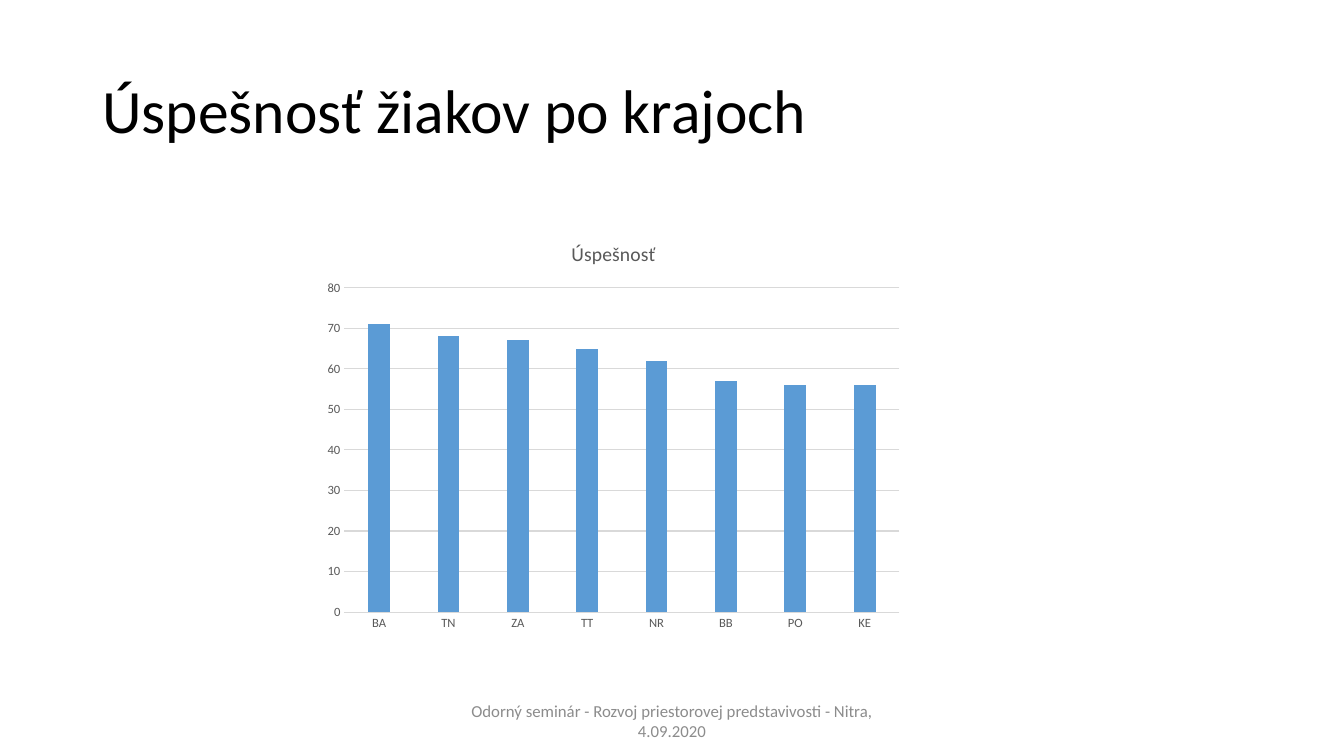
from pptx import Presentation
from pptx.chart.data import CategoryChartData
from pptx.dml.color import RGBColor
from pptx.enum import chart as charts, text
from pptx.util import Pt

THEME = {
    "font": "Calibri",
    "title": {"size": 44, "color": "000000"},
    "footer": {"size": 12, "color": "8C8C8C"},
    "chart": {"size": 10, "color": "000000"},
    "chart_title": {"size": 14, "color": "595959"},
    "axis": {"size": 9, "color": "595959"},
    "grid": "D9D9D9",
    "bar": "5B9BD5",
}


def style_font(font, role):
    look = {"name": THEME["font"], "size": Pt(THEME[role]["size"]), "bold": False}
    for key, value in look.items():
        setattr(font, key, value)
    font.color.rgb = RGBColor.from_string(THEME[role]["color"])


deck = Presentation()
deck.slide_width, deck.slide_height = Pt(960), Pt(540)
page = deck.slides.add_slide(deck.slide_layouts[6])

texts = [
    ("title", "Úspešnosť žiakov po krajoch", (66, 28.75, 828, 104.4),
     {"line_spacing": 0.9, "alignment": text.PP_ALIGN.LEFT}),
    ("footer", "Odorný seminár - Rozvoj priestorovej predstavivosti - Nitra, 4.09.2020",
     (318, 500.5, 324, 28.75), {"alignment": text.PP_ALIGN.CENTER}),
]
for role, words, place, para_format in texts:
    box = page.shapes.add_textbox(*map(Pt, place))
    frame_format = {"word_wrap": True, "vertical_anchor": text.MSO_ANCHOR.MIDDLE}
    for key, value in frame_format.items():
        setattr(box.text_frame, key, value)
    para = box.text_frame.paragraphs[0]
    for key, value in para_format.items():
        setattr(para, key, value)
    span = para.add_run()
    span.text = words
    style_font(span.font, role)

success = {"BA": 71, "TN": 68, "ZA": 67, "TT": 65, "NR": 62, "BB": 57, "PO": 56, "KE": 56}
chart_data = CategoryChartData()
chart_data.categories = list(success)
chart_data.add_series("Úspešnosť", list(success.values()))
chart = page.shapes.add_chart(
    charts.XL_CHART_TYPE.COLUMN_CLUSTERED,
    *map(Pt, (225.5, 159, 425.5, 297.5)), chart_data).chart
chart.has_legend = False
style_font(chart.font, "chart")

chart.has_title = True
heading = chart.chart_title.text_frame.paragraphs[0].add_run()
heading.text = "Úspešnosť"
style_font(heading.font, "chart_title")

regions, scale = chart.category_axis, chart.value_axis
for axis in (regions, scale):
    style_font(axis.tick_labels.font, "axis")
    axis.major_tick_mark = axis.minor_tick_mark = charts.XL_TICK_MARK.NONE
for key, value in {"minimum_scale": 0, "maximum_scale": 80, "major_unit": 10}.items():
    setattr(scale, key, value)
scale.format.line.fill.background()
for line in (regions.format.line, scale.major_gridlines.format.line):
    line.width = Pt(0.75)
    line.color.rgb = RGBColor.from_string(THEME["grid"])

plot = chart.plots[0]
for key, value in {"gap_width": 219, "overlap": -27, "vary_by_categories": False}.items():
    setattr(plot, key, value)
bars = plot.series[0]
bars.invert_if_negative = False
bars.format.fill.solid()
bars.format.fill.fore_color.rgb = RGBColor.from_string(THEME["bar"])

deck.save("out.pptx")
